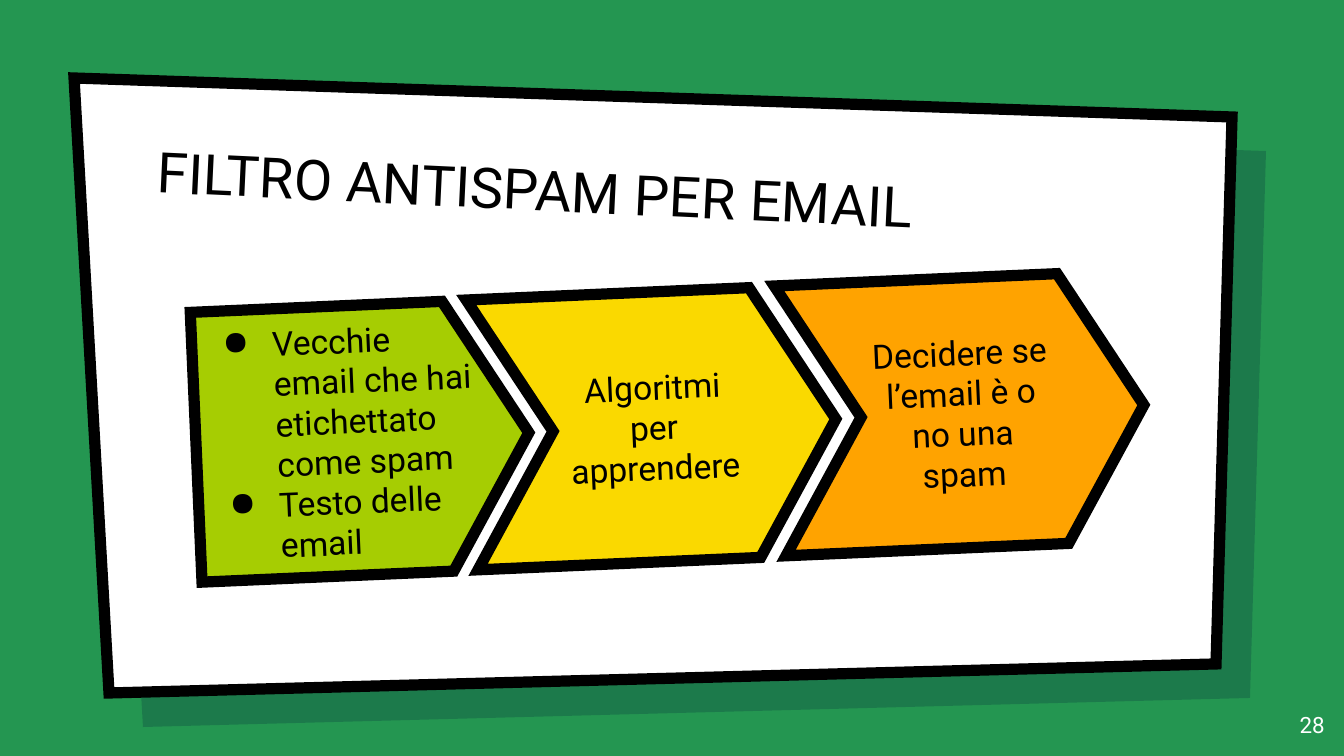
from lxml import etree
from pptx import Presentation
from pptx import util as u
from pptx.dml.color import RGBColor
from pptx.enum import shapes, text
from pptx.oxml.ns import qn

# Content
TITLE = "FILTRO ANTISPAM PER EMAIL"
PAGE = "28"
PENTA, CHEV = shapes.MSO_SHAPE.PENTAGON, shapes.MSO_SHAPE.CHEVRON
# colour, preset, box in px, bulleted, paragraphs; back to front
STEPS = [
    ("orange", CHEV, (780, 278, 364, 270), False,
     ["Decidere se l’email è o no una spam"]),
    ("lime", PENTA, (196, 305, 333, 270), True,
     ["Vecchie email che hai etichettato come spam", "Testo delle email"]),
    ("yellow", CHEV, (472, 292, 364, 270), False,
     ["Algoritmi per apprendere"]),
]
FRAME = [(74, 78), (1232, 117), (1216, 664), (109, 693)]
SHIFT = 34  # offset of the frame's shade

HEX = {"back": "249651", "shade": "001936", "white": "FFFFFF", "black": "000000",
       "lime": "A6CD02", "yellow": "FAD900", "orange": "FFA300"}
FONT = "Roboto"
EMU = 914400 / 134.4
ALIGN = text.PP_ALIGN


def px(n):
    return u.Emu(round(n * EMU))


def rgb(name):
    return RGBColor.from_string(HEX[name])


def place(shape, box, turn=0):
    shape.left, shape.top, shape.width, shape.height = map(px, box)
    shape.rotation = turn


def paint(shape, name):
    shape.shadow.inherit = False
    shape.fill.solid()
    shape.fill.fore_color.rgb = rgb(name)


def edge(shape):
    shape.line.color.rgb = rgb("black")
    shape.line.width = u.Pt(6)
    ln = shape.line._get_or_add_ln()
    etree.SubElement(ln, qn("a:miter")).set("lim", "800000")


def bullet(par):
    prop = par._p.get_or_add_pPr()
    prop.set("marL", str(u.Inches(0.5)))
    prop.set("indent", str(u.Inches(-0.37)))
    tone = etree.SubElement(prop, qn("a:buClr"))
    etree.SubElement(tone, qn("a:srgbClr")).set("val", HEX["black"])
    etree.SubElement(prop, qn("a:buChar")).set("char", "●")


def write(shape, lines, size, name, align, anchor, dots=False):
    frame = shape.text_frame
    frame.text = "\n".join(lines)
    frame.word_wrap = True
    frame.auto_size = text.MSO_AUTO_SIZE.NONE
    frame.vertical_anchor = anchor
    frame.margin_left = frame.margin_right = u.Inches(0.1)
    frame.margin_top = frame.margin_bottom = u.Inches(0.1)
    for par in frame.paragraphs:
        par.alignment = align
        if dots:
            bullet(par)
        for run in par.runs:
            run.font.size = u.Pt(size)
            run.font.name = FONT
            run.font.color.rgb = rgb(name)


prs = Presentation()
prs.slide_width, prs.slide_height = px(1344), px(756)
slide = prs.slides.add_slide(prs.slide_layouts[5])
slide.background.fill.solid()
slide.background.fill.fore_color.rgb = rgb("back")
parts = slide.shapes


def outline(shift, name):
    pts = [(px(x + shift), px(y + shift)) for x, y in FRAME]
    pen = parts.build_freeform(*pts[0])
    pen.add_line_segments(pts[1:], close=True)
    shape = pen.convert_to_shape()
    paint(shape, name)
    return shape


# Tilted frame and its shade
shade = outline(SHIFT, "shade")
shade.line.fill.background()
tone = shade.fill._xPr.find(".//" + qn("a:srgbClr"))
etree.SubElement(tone, qn("a:alpha")).set("val", "22000")
edge(outline(0, "white"))

# Title, raised above the frame
title = parts.title
place(title, (144, 129, 1033, 112), 2.7)
write(title, [TITLE], 30, "black", ALIGN.LEFT, text.MSO_ANCHOR.BOTTOM)
parts._spTree.append(title._element)

# Process arrows
for name, kind, box, dots, lines in STEPS:
    step = parts.add_shape(kind, *map(px, box))
    step.rotation = 357.5
    step.adjustments[0] = 0.3
    paint(step, name)
    edge(step)
    write(step, lines, 18, "black", ALIGN.LEFT if dots else ALIGN.CENTER,
          text.MSO_ANCHOR.MIDDLE, dots)

# Page number
page = parts.add_textbox(*map(px, (1258, 698, 80, 58)))
write(page, [PAGE], 12, "white", ALIGN.RIGHT, text.MSO_ANCHOR.TOP)

prs.save("out.pptx")
